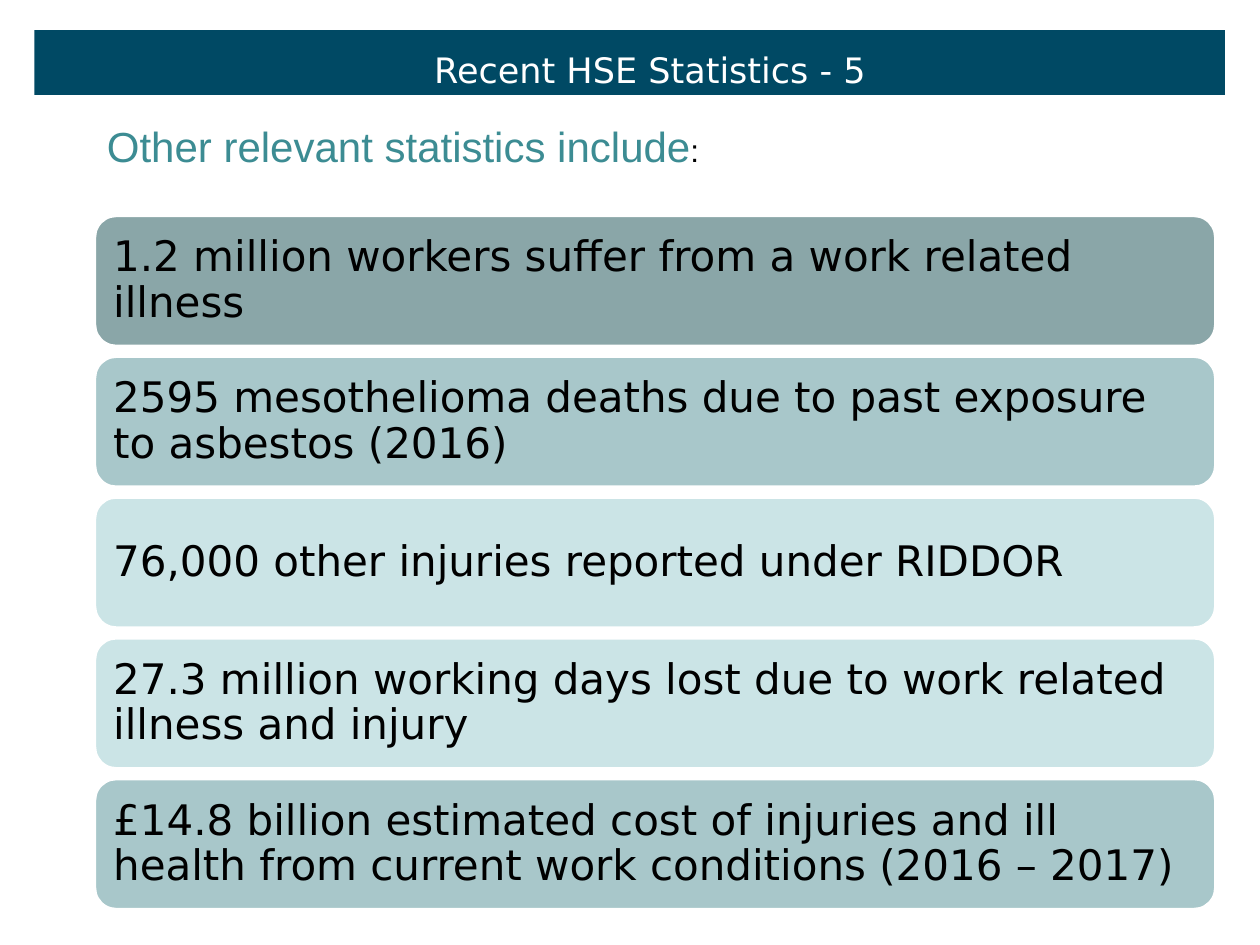
from dataclasses import dataclass

from pptx import Presentation
from pptx import util as u
from pptx.dml.color import RGBColor
from pptx.enum import shapes, text

COLOURS = {
    "banner": "004964",
    "heading": "3C8C93",
    "dark": "8AA6A8",
    "medium": "A8C7CA",
    "light": "CBE4E6",
    "white": "FFFFFF",
    "black": "000000",
}
BODY_FONT = "DejaVu Sans"
HEADING_FONT = "Arial"


@dataclass(frozen=True)
class Box:
    left: float
    top: float
    width: float
    height: float

    def lengths(self) -> tuple:
        return tuple(u.Pt(n) for n in (self.left, self.top, self.width, self.height))


@dataclass(frozen=True)
class Statistic:
    wording: str
    colour: str


STATISTICS = [
    Statistic("1.2 million workers suffer from a work related illness", "dark"),
    Statistic("2595 mesothelioma deaths due to past exposure to asbestos (2016)", "medium"),
    Statistic("76,000 other injuries reported under RIDDOR", "light"),
    Statistic("27.3 million working days lost due to work related illness and injury", "light"),
    Statistic(
        "£14.8 billion estimated cost of injuries and ill health "
        "from current work conditions (2016 – 2017)",
        "medium",
    ),
]
FIRST_CARD = Box(54, 123.1, 640.8, 74.9)
CARD_PITCH = 80.46


def rgb(colour: str) -> RGBColor:
    return RGBColor.from_string(COLOURS[colour])


def write(paragraph, wording: str, *, size: float, font: str = BODY_FONT,
          colour: str = "black") -> None:
    run = paragraph.add_run()
    run.text = wording
    run.font.size = u.Pt(size)
    run.font.name = font
    run.font.color.rgb = rgb(colour)


def add_panel(slide, kind, box: Box, colour: str):
    shape = slide.shapes.add_shape(kind, *box.lengths())
    shape.shadow.inherit = False
    shape.fill.solid()
    shape.fill.fore_color.rgb = rgb(colour)
    shape.line.fill.background()
    return shape


def add_title(slide) -> None:
    add_panel(slide, shapes.MSO_SHAPE.RECTANGLE, Box(19.6, 17.2, 680.4, 37), "banner")
    frame = slide.shapes.add_textbox(*Box(54, 10.8, 635, 43.9).lengths()).text_frame
    frame.word_wrap = True
    frame.vertical_anchor = text.MSO_ANCHOR.BOTTOM
    paragraph = frame.paragraphs[0]
    paragraph.alignment = text.PP_ALIGN.CENTER
    paragraph.line_spacing = 0.75
    write(paragraph, "Recent HSE Statistics - 5", size=20, colour="white")


def add_heading(slide) -> None:
    frame = slide.shapes.add_textbox(*Box(54, 65.5, 356.4, 36.7).lengths()).text_frame
    frame.word_wrap = False
    paragraph = frame.paragraphs[0]
    write(paragraph, "Other relevant statistics include", size=24,
          font=HEADING_FONT, colour="heading")
    write(paragraph, ":", size=18, font=HEADING_FONT)


def add_card(slide, statistic: Statistic, box: Box) -> None:
    card = add_panel(slide, shapes.MSO_SHAPE.ROUNDED_RECTANGLE, box, statistic.colour)
    card.line.color.rgb = rgb("white")
    card.line.width = u.Pt(2)
    frame = card.text_frame
    frame.word_wrap = True
    frame.vertical_anchor = text.MSO_ANCHOR.MIDDLE
    frame.margin_left = frame.margin_right = u.Pt(7.2)
    frame.margin_top = frame.margin_bottom = u.Pt(7.2)
    paragraph = frame.paragraphs[0]
    paragraph.alignment = text.PP_ALIGN.LEFT
    paragraph.line_spacing = 0.9
    write(paragraph, statistic.wording, size=24)


def main() -> None:
    presentation = Presentation()
    presentation.slide_width = u.Pt(720)
    presentation.slide_height = u.Pt(540)
    slide = presentation.slides.add_slide(presentation.slide_layouts[6])
    add_title(slide)
    add_heading(slide)
    for index, statistic in enumerate(STATISTICS):
        top = FIRST_CARD.top + index * CARD_PITCH
        add_card(slide, statistic,
                 Box(FIRST_CARD.left, top, FIRST_CARD.width, FIRST_CARD.height))
    presentation.save("out.pptx")


if __name__ == "__main__":
    main()
